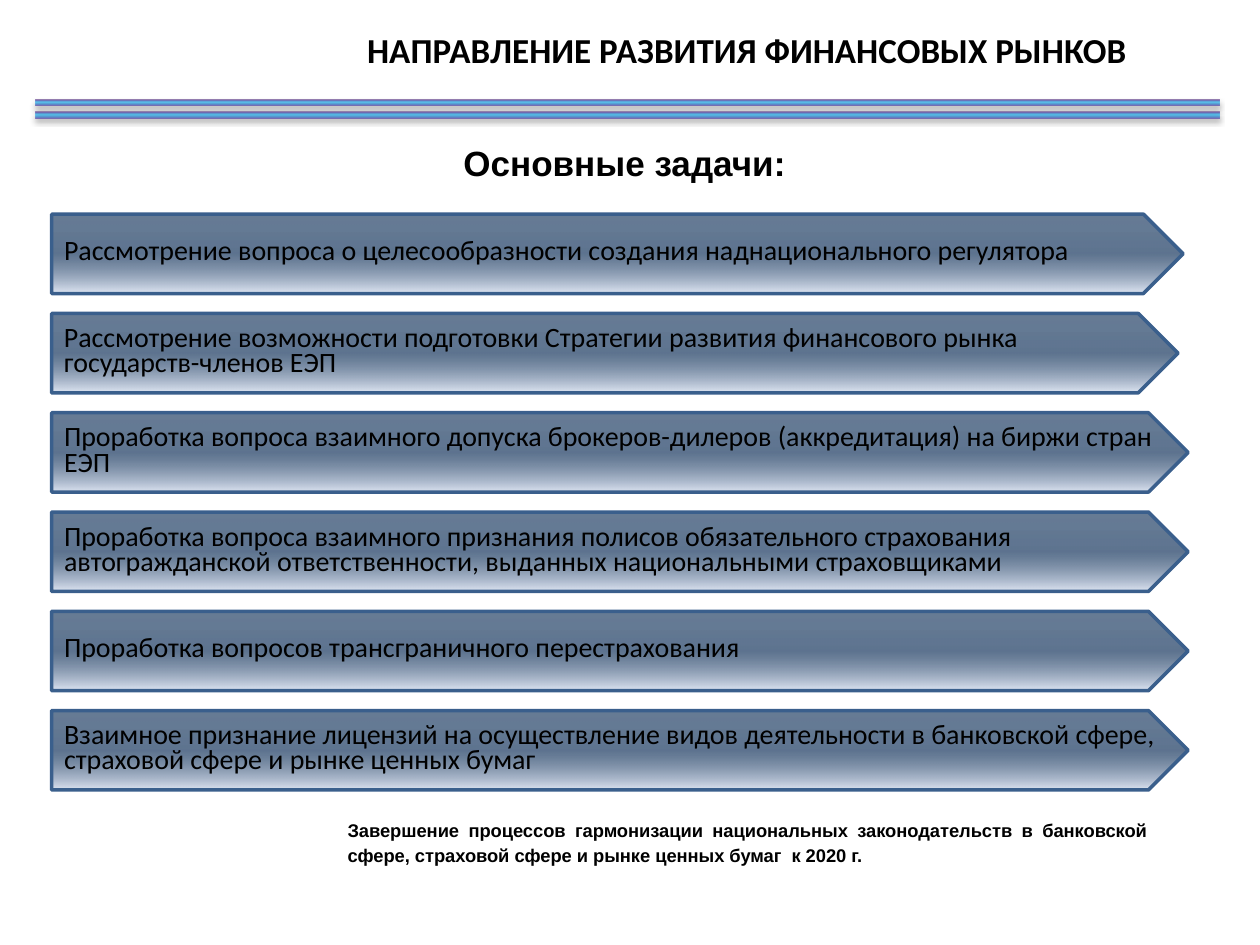
from lxml.etree import SubElement as Sub
from pptx import Presentation as Deck
from pptx.dml.color import RGBColor as RGB
from pptx.enum.shapes import MSO_SHAPE as Kind
from pptx.enum.text import MSO_ANCHOR as Anchor, PP_ALIGN as Align
from pptx.oxml.ns import qn
from pptx.util import Inches, Pt

BLACK = RGB(0x00, 0x00, 0x00)
NAVY = RGB(0x17, 0x37, 0x5E)
PALE = RGB(0xE1, 0xE8, 0xF5)
EDGE = RGB(0x3A, 0x5F, 0x8C)
PLUM = RGB(0x7B, 0x58, 0xA6)
VIOLET = RGB(0x7C, 0x57, 0xA8)
SKY = RGB(0x00, 0xB0, 0xF0)

ARROW = [(0, NAVY, 65), (50, NAVY, 69), (100, PALE, 100)]
BAND = [(12, PLUM, 100), (43, SKY, 60), (100, VIOLET, 100)]

TASKS = [
    (8.98, "Рассмотрение вопроса о целесообразности создания наднационального регулятора"),
    (8.94, "Рассмотрение возможности подготовки Стратегии развития финансового рынка государств-членов ЕЭП"),
    (9.02, "Проработка вопроса взаимного допуска брокеров-дилеров (аккредитация) на биржи стран ЕЭП"),
    (9.02, "Проработка вопроса взаимного признания полисов обязательного страхования "
           "автогражданской ответственности, выданных национальными страховщиками"),
    (9.02, "Проработка вопросов трансграничного перестрахования"),
    (9.02, "Взаимное признание лицензий на осуществление видов деятельности в банковской сфере, "
           "страховой сфере и рынке ценных бумаг"),
]


class Page:
    WIDE, HIGH = 10, 7.5
    COLS, ROWS = 100, 75

    def __init__(self):
        self.deck = Deck()
        self.deck.slide_width = Inches(self.WIDE)
        self.deck.slide_height = Inches(self.HIGH)
        self.slide = self.deck.slides.add_slide(self.deck.slide_layouts[6])

    def area(self, col, row, cols, rows):
        dx, dy = self.WIDE / self.COLS, self.HIGH / self.ROWS
        return [Inches(n) for n in (col * dx, row * dy, cols * dx, rows * dy)]

    def label(self, shape, words, size, face="Arial", bold=False,
              align=Align.LEFT, lead=None, after=0):
        shape.text_frame.word_wrap = True
        para = shape.text_frame.paragraphs[0]
        para.alignment = align
        para.line_spacing = lead
        para.space_after = Pt(after)
        run = para.add_run()
        run.text = words
        font = run.font
        font.name, font.size, font.bold = face, Pt(size), bold
        font.color.rgb = BLACK

    def text(self, spot, words, size, **look):
        self.label(self.slide.shapes.add_textbox(*self.area(*spot)), words, size, **look)

    def block(self, kind, spot, stops):
        shape = self.slide.shapes.add_shape(kind, *self.area(*spot))
        shape.shadow.inherit = False
        shape.fill.gradient()
        shape.fill.gradient_angle = 270
        ramp = next(shape.element.iter(qn("a:gsLst")))
        for old in list(ramp):
            ramp.remove(old)
        for place, tone, alpha in stops:
            stop = Sub(ramp, qn("a:gs"), pos=str(place * 1000))
            self.tint(stop, tone, alpha)
        return shape

    def tint(self, node, tone, alpha):
        paint = Sub(node, qn("a:srgbClr"), val=str(tone))
        Sub(paint, qn("a:alpha"), val=str(alpha * 1000))

    def band(self, row):
        shape = self.block(Kind.RECTANGLE, (2.8, row, 94, 0.5), BAND)
        shape.line.fill.background()
        glow = next(shape.element.iter(qn("a:effectLst")))
        cast = Sub(glow, qn("a:outerShdw"), blurRad=str(Pt(3.1)), dist=str(Pt(1.8)),
                   dir="5400000", rotWithShape="0")
        self.tint(cast, BLACK, 35)

    def arrow(self, row, cols, words):
        shape = self.block(Kind.PENTAGON, (4.1, row, cols, 6.3), ARROW)
        shape.line.color.rgb = EDGE
        shape.line.width = Pt(2)
        shape.text_frame.vertical_anchor = Anchor.MIDDLE
        self.label(shape, words, 16, face="Calibri", lead=Pt(14.4), after=2)


def main():
    page = Page()
    page.text((27.8, 1.8, 63, 4.4), "НАПРАВЛЕНИЕ РАЗВИТИЯ ФИНАНСОВЫХ РЫНКОВ", 20,
              face="Calibri", bold=True, align=Align.CENTER)
    for row in (7.9, 8.9):
        page.band(row)
    page.text((35.8, 12.1, 63, 3.1), "Основные задачи:", 20,
              bold=True, lead=Pt(14.4), after=2)
    for i, (wide, words) in enumerate(TASKS):
        page.arrow(17 + 7.88 * i, wide * 10, words)
    page.text((26.6, 64.3, 65.5, 5),
              "Завершение процессов гармонизации национальных законодательств в банковской "
              "сфере, страховой сфере и рынке ценных бумаг  к 2020 г.",
              10.5, bold=True, align=Align.JUSTIFY, lead=1.14, after=12)
    page.deck.save("out.pptx")


if __name__ == "__main__":
    main()
